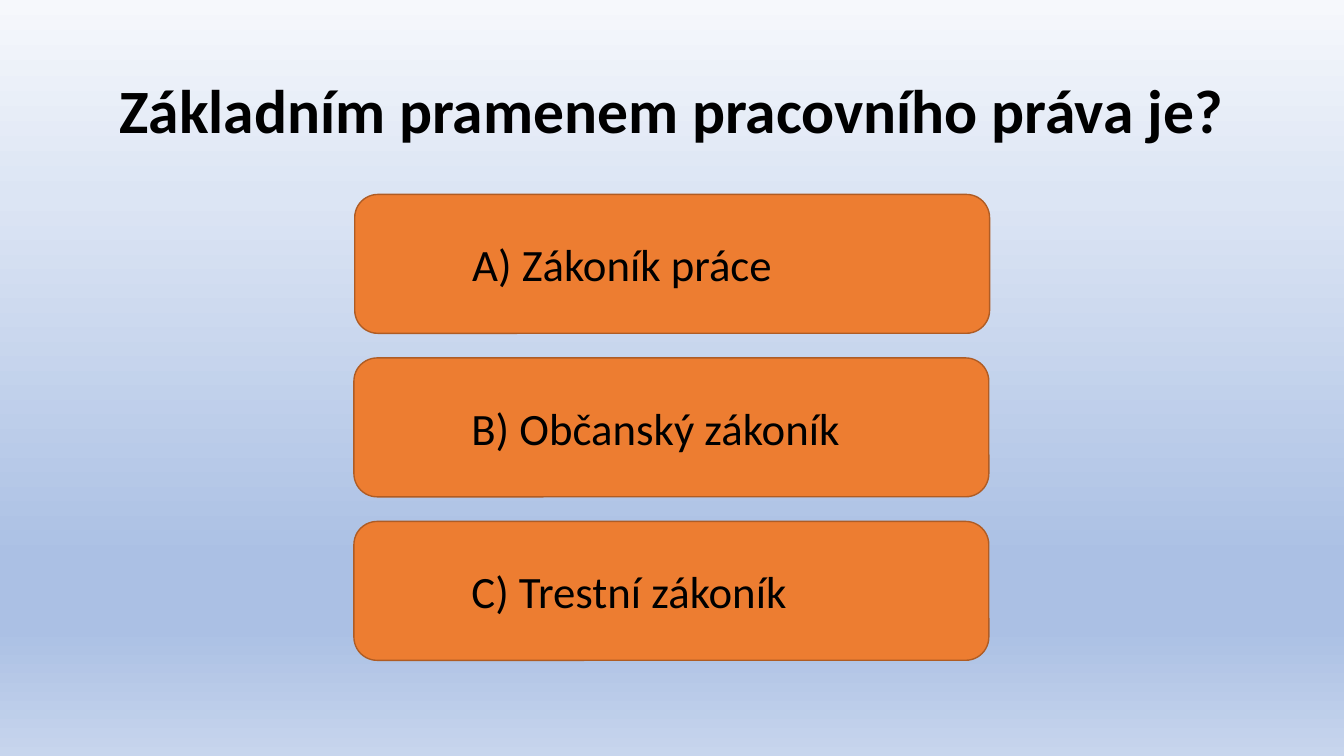
"""Builds a quiz slide with a question and three answer boxes."""
from dataclasses import dataclass

from lxml import etree
from pptx import Presentation
from pptx.dml.color import RGBColor
from pptx.enum.shapes import MSO_SHAPE
from pptx.enum.text import MSO_ANCHOR, MSO_AUTO_SIZE, PP_ALIGN
from pptx.oxml.ns import qn
from pptx.slide import Slide
from pptx.util import Cm, Pt

ROUNDED = MSO_SHAPE.ROUNDED_RECTANGLE
MIDDLE = MSO_ANCHOR.MIDDLE
NO_AUTOFIT = MSO_AUTO_SIZE.NONE
CENTER, LEFT = PP_ALIGN.CENTER, PP_ALIGN.LEFT
TITLE_ONLY = 5


@dataclass(frozen=True)
class Theme:
    font: str = "Calibri"
    title_size: Pt = Pt(44)
    answer_size: Pt = Pt(32)
    text: RGBColor = RGBColor(0x00, 0x00, 0x00)
    box: RGBColor = RGBColor(0xED, 0x7D, 0x31)
    border: RGBColor = RGBColor(0xAF, 0x5C, 0x24)
    backdrop: tuple[tuple[int, str], ...] = (
        (0, "F6F8FC"),
        (26, "DCE5F4"),
        (74, "ABC0E4"),
        (83, "ABC0E4"),
        (100, "C7D5ED"),
    )


@dataclass(frozen=True)
class Answer:
    text: str
    left: Cm


THEME = Theme()
QUESTION = "Základním pramenem pracovního práva je?"
ANSWERS = (
    Answer("A) Zákoník práce", Cm(8.94)),
    Answer("B) Občanský zákoník", Cm(8.92)),
    Answer("C) Trestní zákoník", Cm(8.92)),
)
FIRST_TOP, PITCH = Cm(4.9), Cm(4.12)
BOX_WIDTH, BOX_HEIGHT = Cm(16), Cm(3.5)
BOX_INDENT = Cm(2.79)


def paint_background(s: Slide) -> None:
    fill = s.background.fill
    fill.gradient()
    fill.gradient_angle = 270
    stops = s.element.find(".//" + qn("a:gsLst"))
    stops.clear()
    for percent, color in THEME.backdrop:
        stop = etree.SubElement(stops, qn("a:gs"), pos=str(percent * 1000))
        etree.SubElement(stop, qn("a:srgbClr"), val=color)


def write_title(s: Slide, text: str) -> None:
    title = s.shapes.title
    title.left, title.top = Cm(2.33), Cm(1.01)
    title.width, title.height = Cm(29.21), Cm(3.68)
    tf = title.text_frame
    tf.text = text
    tf.auto_size = NO_AUTOFIT
    tf.vertical_anchor = MIDDLE
    p = tf.paragraphs[0]
    p.alignment = CENTER
    p.line_spacing = 0.9
    p.font.name = THEME.font
    p.font.size = THEME.title_size
    p.font.bold = True
    p.font.color.rgb = THEME.text


def add_answer(s: Slide, answer: Answer, top: int) -> None:
    sp = s.shapes.add_shape(ROUNDED, answer.left, top, BOX_WIDTH, BOX_HEIGHT)
    sp.shadow.inherit = False
    sp.fill.solid()
    sp.fill.fore_color.rgb = THEME.box
    sp.line.color.rgb = THEME.border
    sp.line.width = Pt(1)
    tf = sp.text_frame
    tf.text = answer.text
    tf.margin_left = BOX_INDENT
    tf.vertical_anchor = MIDDLE
    p = tf.paragraphs[0]
    p.alignment = LEFT
    p.font.name = THEME.font
    p.font.size = THEME.answer_size
    p.font.color.rgb = THEME.text


def main() -> None:
    prs = Presentation()
    prs.slide_width, prs.slide_height = Cm(33.87), Cm(19.05)
    s = prs.slides.add_slide(prs.slide_layouts[TITLE_ONLY])
    paint_background(s)
    write_title(s, QUESTION)
    for row, answer in enumerate(ANSWERS):
        add_answer(s, answer, FIRST_TOP + row * PITCH)
    prs.save("out.pptx")


if __name__ == "__main__":
    main()
